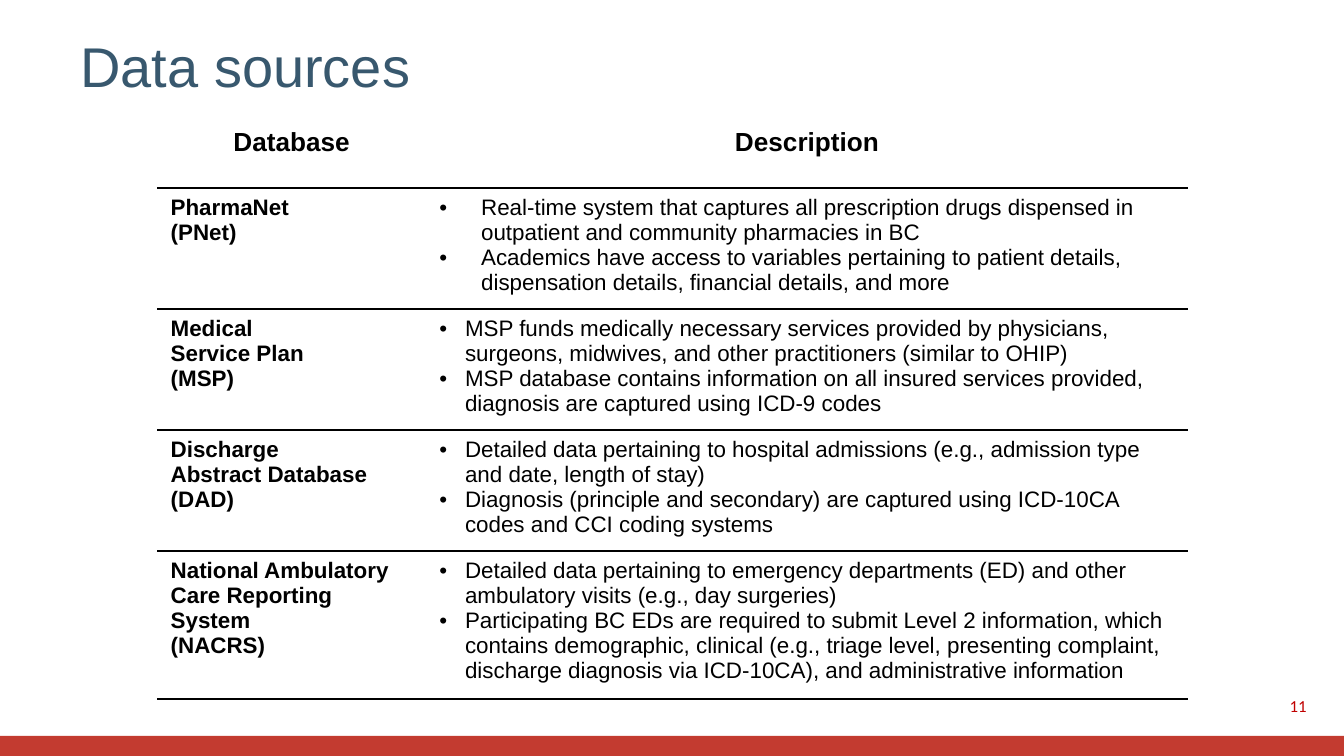
from dataclasses import dataclass

from lxml.etree import SubElement
from pptx import Presentation
from pptx.dml.color import RGBColor
from pptx.enum.shapes import MSO_SHAPE as Shape
from pptx.enum.text import MSO_ANCHOR as Anchor, PP_ALIGN as Align
from pptx.oxml.ns import qn
from pptx.util import Emu, Inches, Pt

WHITE = RGBColor(0xFF, 0xFF, 0xFF)
BLACK = RGBColor(0, 0, 0)
BRICK = RGBColor(0xC3, 0x3B, 0x30)
SLATE = RGBColor(0x38, 0x58, 0x6E)
CRIMSON = RGBColor(0xC0, 0, 0)

WIDTH = Inches(10)
HEIGHT = Emu(WIDTH * 9 // 16)
GRID = WIDTH // 200
COLUMN_WIDTHS = (2, 5.67)
HEADINGS = ("Database", "Description")
HEADING_HEIGHT = 0.5
TABLE_HEIGHT = 4.3


@dataclass(frozen=True)
class Source:
    name: tuple[str, ...]
    facts: tuple[str, ...]
    height: float
    indent: float = 0.19


@dataclass(frozen=True)
class Style:
    size: float
    color: RGBColor = BLACK
    bold: bool = False
    font: str = "Arial"
    align: Align = Align.LEFT
    indent: float = 0


SOURCES = (
    Source(
        ("PharmaNet", "(PNet)"),
        ("Real-time system that captures all prescription drugs dispensed in "
         "outpatient and community pharmacies in BC",
         "Academics have access to variables pertaining to patient details, "
         "dispensation details, financial details, and more"),
        height=0.5,
        indent=0.31,
    ),
    Source(
        ("Medical", "Service Plan", "(MSP)"),
        ("MSP funds medically necessary services provided by physicians, "
         "surgeons, midwives, and other practitioners (similar to OHIP)",
         "MSP database contains information on all insured services provided, "
         "diagnosis are captured using ICD-9 codes"),
        height=0.49,
    ),
    Source(
        ("Discharge", "Abstract Database", "(DAD)"),
        ("Detailed data pertaining to hospital admissions (e.g., admission type "
         "and date, length of stay)",
         "Diagnosis (principle and secondary) are captured using ICD-10CA "
         "codes and CCI coding systems"),
        height=0.68,
    ),
    Source(
        ("National Ambulatory Care Reporting System", "(NACRS)"),
        ("Detailed data pertaining to emergency departments (ED) and other "
         "ambulatory visits (e.g., day surgeries)",
         "Participating BC EDs are required to submit Level 2 information, which "
         "contains demographic, clinical (e.g., triage level, presenting complaint, "
         "discharge diagnosis via ICD-10CA), and administrative information"),
        height=0.65,
    ),
)


def write(frame, lines: tuple[str, ...], style: Style) -> None:
    frame.word_wrap = True
    for index, line in enumerate(lines):
        paragraph = frame.paragraphs[0] if index == 0 else frame.add_paragraph()
        paragraph.alignment = style.align
        if style.indent:
            properties = paragraph._p.get_or_add_pPr()
            properties.set("marL", str(Inches(style.indent)))
            properties.set("indent", str(-Inches(style.indent)))
            SubElement(properties, qn("a:buFont"), typeface="Arial")
            SubElement(properties, qn("a:buChar"), char="•")
        run = paragraph.add_run()
        run.text = line
        run.font.name = style.font
        run.font.size = Pt(style.size)
        run.font.bold = style.bold
        run.font.color.rgb = style.color
        SubElement(paragraph._p, qn("a:endParaRPr"), sz=str(style.size * 100))


def add_label(slide, column: float, row: float, columns: float, rows: float,
              text: str, style: Style) -> None:
    bounds = (Emu(round(length * GRID)) for length in (column, row, columns, rows))
    label = slide.shapes.add_textbox(*bounds)
    label.text_frame.vertical_anchor = Anchor.MIDDLE
    write(label.text_frame, (text,), style)


def rule_cell(cell, is_heading: bool) -> None:
    properties = cell._tc.get_or_add_tcPr()
    top = WHITE if is_heading else BLACK
    for side, color in (("L", WHITE), ("R", WHITE), ("T", top), ("B", BLACK)):
        line = SubElement(properties, qn(f"a:ln{side}"), w=str(Pt(1)))
        if color == WHITE:
            SubElement(line, qn("a:noFill"))
        else:
            fill = SubElement(line, qn("a:solidFill"))
            SubElement(fill, qn("a:srgbClr"), val=str(color))
    cell.fill.background()


def add_source_table(slide) -> None:
    heights = (HEADING_HEIGHT, *(source.height for source in SOURCES))
    table = slide.shapes.add_table(
        len(heights), len(COLUMN_WIDTHS), Inches(1.17), Inches(0.9),
        Inches(sum(COLUMN_WIDTHS)), Inches(TABLE_HEIGHT)).table
    table.first_row = False
    table.horz_banding = False
    for column, width in zip(table.columns, COLUMN_WIDTHS):
        column.width = Inches(width)
    for column, heading in enumerate(HEADINGS):
        write(table.cell(0, column).text_frame, (heading,),
              Style(14, bold=True, align=Align.CENTER))
    for row, source in enumerate(SOURCES, start=1):
        write(table.cell(row, 0).text_frame, source.name, Style(12, bold=True))
        write(table.cell(row, 1).text_frame, source.facts,
              Style(12, indent=source.indent))
    for index, (row, height) in enumerate(zip(table.rows, heights)):
        row.height = Inches(height)
        for cell in row.cells:
            rule_cell(cell, index == 0)
    slide.shapes[-1].height = Inches(TABLE_HEIGHT)


def add_footer_band(slide) -> None:
    height = Inches(0.15)
    band = slide.shapes.add_shape(Shape.RECTANGLE, 0, HEIGHT - height, WIDTH, height)
    band.shadow.inherit = False
    band.fill.solid()
    band.fill.fore_color.rgb = BRICK
    band.line.fill.background()


def main() -> None:
    deck = Presentation()
    deck.slide_width, deck.slide_height = WIDTH, HEIGHT
    slide = deck.slides.add_slide(deck.slide_layouts[6])
    add_footer_band(slide)
    add_label(slide, 10, 3, 173.4, 13.4, "Data sources", Style(30, SLATE))
    add_label(slide, 188.4, 102, 8, 6, "11",
              Style(9, CRIMSON, font="Calibri", align=Align.RIGHT))
    add_source_table(slide)
    deck.save("out.pptx")


if __name__ == "__main__":
    main()
